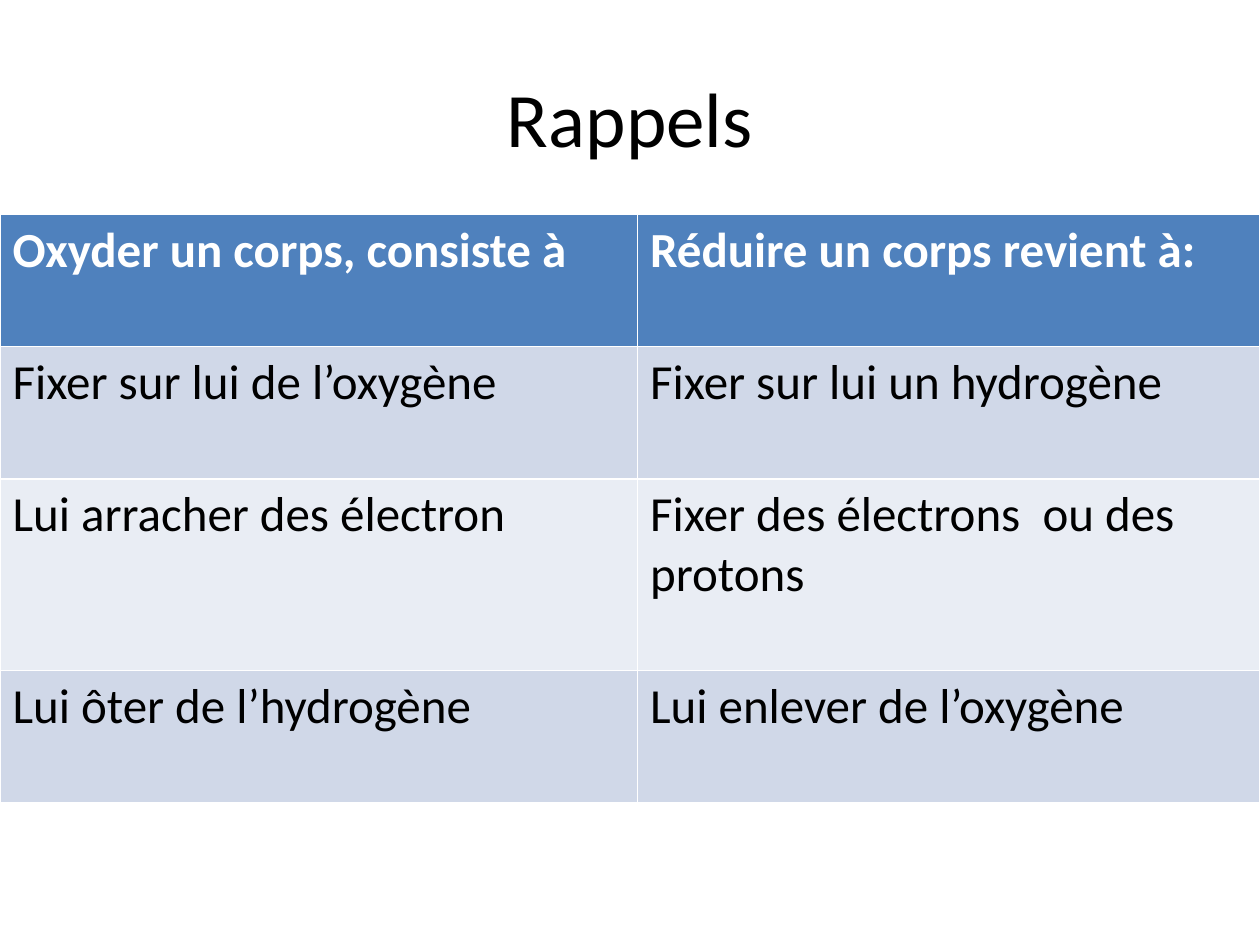
"""Build the "Rappels" slide comparing oxidation and reduction."""
from pptx import Presentation
from pptx.dml.color import RGBColor
from pptx.enum.text import MSO_ANCHOR as Anchor, PP_ALIGN as Align
from pptx.util import Inches, Pt

BLACK = RGBColor(0x00, 0x00, 0x00)
WHITE = RGBColor(0xFF, 0xFF, 0xFF)
BLUE = RGBColor(0x4F, 0x81, 0xBD)
DARK = RGBColor(0xD0, 0xD8, 0xE8)
LIGHT = RGBColor(0xE9, 0xED, 0xF4)
FONT = "Calibri"

ROWS = [
    ("Oxyder un corps, consiste à", "Réduire un corps revient à:"),
    ("Fixer sur lui de l’oxygène", "Fixer sur lui un hydrogène"),
    ("Lui arracher des électron", "Fixer des électrons  ou des protons"),
    ("Lui ôter de l’hydrogène", "Lui enlever de l’oxygène"),
]
WIDTHS = [5.06, 4.94]
HEIGHTS = [1.05, 1.05, 1.52, 1.05]
FILLS = [BLUE, DARK, LIGHT, DARK]


def style(para, size, color, bold=False):
    font = para.font
    font.name = FONT
    font.size = Pt(size)
    font.bold = bold
    font.color.rgb = color


deck = Presentation()
deck.slide_width = Inches(10)
deck.slide_height = Inches(7.5)
slide = deck.slides.add_slide(deck.slide_layouts[6])

title = slide.shapes.add_textbox(Inches(0.5), Inches(0.3), Inches(9), Inches(1.25))
frame = title.text_frame
frame.word_wrap = True
frame.vertical_anchor = Anchor.MIDDLE
frame.text = "Rappels"
frame.paragraphs[0].alignment = Align.CENTER
style(frame.paragraphs[0], 44, BLACK)

table = slide.shapes.add_table(
    len(ROWS), len(WIDTHS), Inches(0), Inches(1.7),
    Inches(sum(WIDTHS)), Inches(sum(HEIGHTS))).table
for col, width in zip(table.columns, WIDTHS):
    col.width = Inches(width)

for r, (texts, height, fill) in enumerate(zip(ROWS, HEIGHTS, FILLS)):
    table.rows[r].height = Inches(height)
    head = r == 0
    for c, text in enumerate(texts):
        cell = table.cell(r, c)
        cell.fill.solid()
        cell.fill.fore_color.rgb = fill
        cell.text = text
        style(cell.text_frame.paragraphs[0], 28, WHITE if head else BLACK, head)

deck.save("out.pptx")
